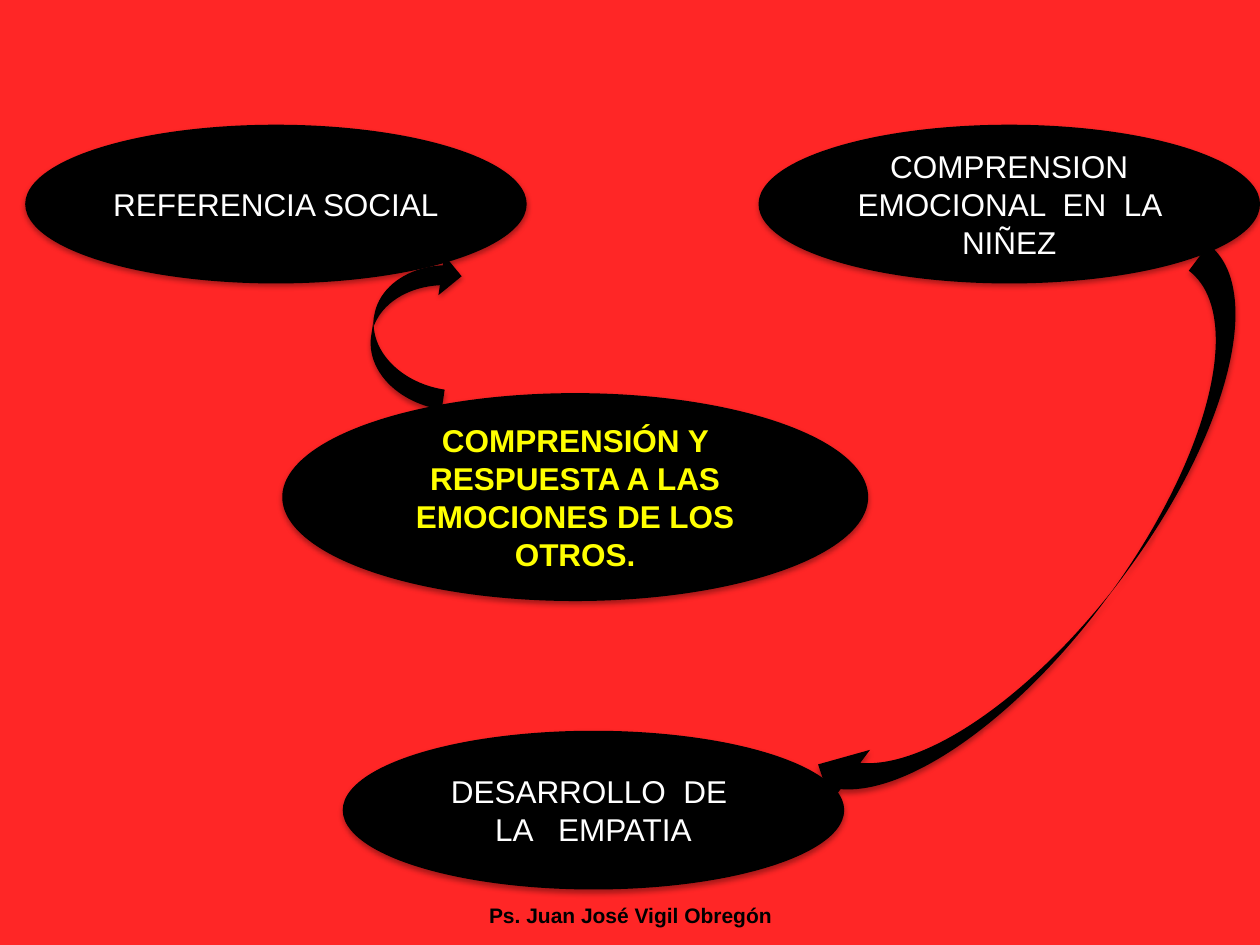
from lxml.etree import SubElement as Sub
from pptx import Presentation
from pptx.dml.color import RGBColor
from pptx.enum.shapes import MSO_SHAPE as Kind
from pptx.enum.text import MSO_ANCHOR as Anchor, PP_ALIGN as Align
from pptx.oxml.ns import qn
from pptx.util import Inches, Pt

BLACK, WHITE, YELLOW, RED = "000000", "FFFFFF", "FFFF00", "FF2626"


def paint(fill, color):
    fill.solid()
    fill.fore_color.rgb = RGBColor.from_string(color)


def shade(shape):
    """Give the shape a soft shadow straight below it."""
    effects = Sub(shape._element.spPr, qn("a:effectLst"))
    outer = Sub(effects, qn("a:outerShdw"), blurRad=str(Pt(3.1)),
                dist=str(Pt(1.8)), dir="5400000", rotWithShape="0")
    color = Sub(outer, qn("a:srgbClr"), val=BLACK)
    Sub(color, qn("a:alpha"), val="35000")


def write(shape, text, size, color, bold):
    frame = shape.text_frame
    frame.word_wrap = True
    frame.vertical_anchor = Anchor.MIDDLE
    par = frame.paragraphs[0]
    par.text = text
    par.alignment = Align.CENTER
    font = par.font
    font.name, font.size, font.bold = "Arial", Pt(size), bold
    font.color.rgb = RGBColor.from_string(color)


def add_solid(slide, kind, box, turn=0):
    shape = slide.shapes.add_shape(kind, *map(Inches, box))
    shape.rotation = turn
    paint(shape.fill, BLACK)
    shape.line.fill.background()
    shade(shape)
    return shape


def add_oval(slide, text, left, top, width=3.98, height=1.26,
             color=WHITE, bold=False):
    oval = add_solid(slide, Kind.OVAL, (left, top, width, height))
    write(oval, text, 18, color, bold)


def add_credit(slide, text):
    box = slide.shapes.add_textbox(*map(Inches, (3.42, 7.06, 3.17, 0.4)))
    write(box, text, 12, BLACK, True)


def main():
    deck = Presentation()
    deck.slide_width, deck.slide_height = Inches(10), Inches(7.5)
    slide = deck.slides.add_slide(deck.slide_layouts[6])
    paint(slide.background.fill, RED)

    add_oval(slide, "COMPRENSIÓN Y RESPUESTA A LAS EMOCIONES DE LOS OTROS.",
             2.24, 3.12, 4.65, 1.65, YELLOW, True)
    add_oval(slide, "REFERENCIA SOCIAL", 0.2, 0.99)
    add_oval(slide, "COMPRENSION EMOCIONAL  EN  LA NIÑEZ", 6.02, 0.99)
    add_oval(slide, "DESARROLLO  DE  LA   EMPATIA", 2.72, 5.8)

    add_solid(slide, Kind.CURVED_LEFT_ARROW, (2.96, 1.98, 0.64, 1.23), 188.5)
    add_solid(slide, Kind.CURVED_DOWN_ARROW, (5.67, 3.9, 5.42, 1.04), 126.9)
    add_credit(slide, "Ps. Juan José Vigil Obregón")
    deck.save("out.pptx")


if __name__ == "__main__":
    main()
